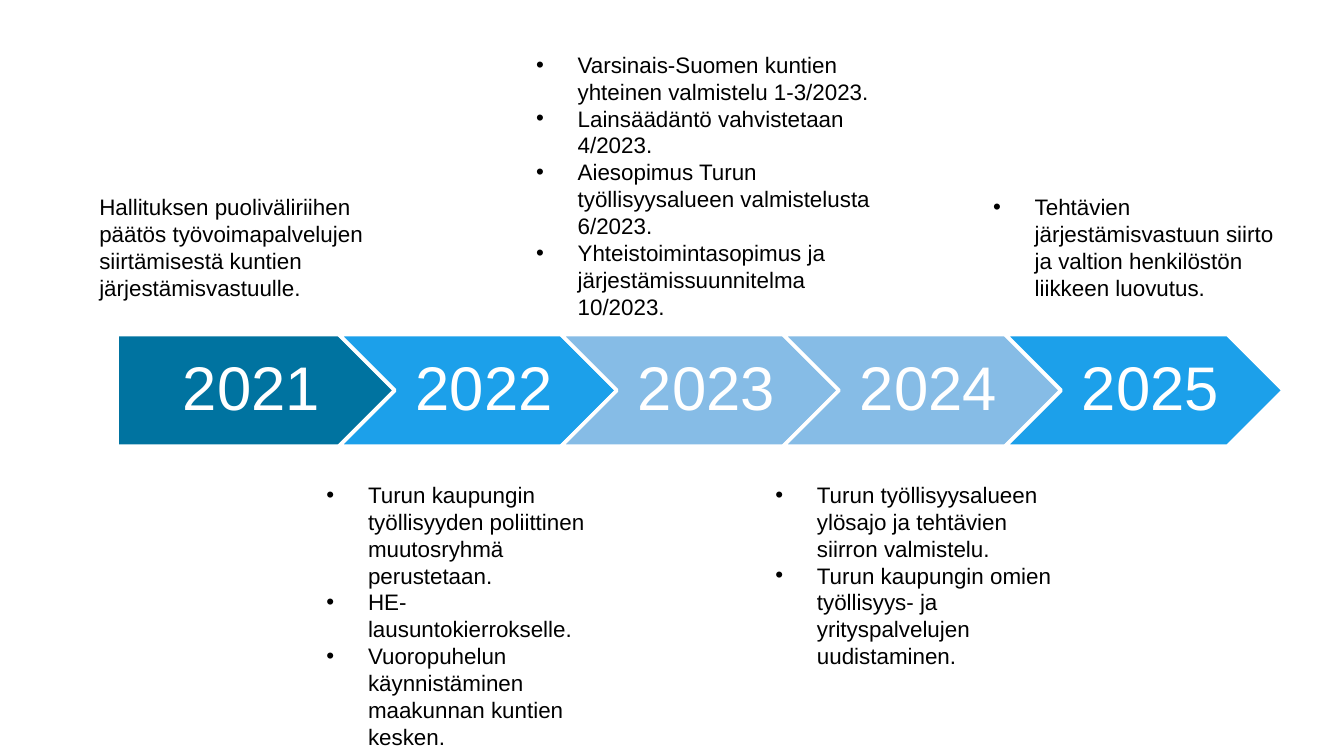
"""Build a timeline slide of yearly steps with notes above and below."""
from lxml import etree
from pptx import Presentation
from pptx.dml.color import RGBColor
from pptx.enum.shapes import MSO_SHAPE
from pptx.enum.text import MSO_ANCHOR, MSO_AUTO_SIZE, PP_ALIGN
from pptx.oxml.ns import qn
from pptx.util import Inches, Pt

PLATE, CHEVRON = MSO_SHAPE.PENTAGON, MSO_SHAPE.CHEVRON
MIDDLE, CENTER, GROW = MSO_ANCHOR.MIDDLE, PP_ALIGN.CENTER, MSO_AUTO_SIZE.SHAPE_TO_FIT_TEXT

COLORS = {"dark": "0073A0", "blue": "1CA0EA", "pale": "86BCE6", "white": "FFFFFF", "black": "000000"}
YEARS = [("2021", "dark"), ("2022", "blue"), ("2023", "pale"), ("2024", "pale"), ("2025", "blue")]
FIRST, LAST, TOP, WIDTH, HEIGHT = 0.87, 7.48, 2.49, 2.07, 0.83
STEP = (LAST - FIRST) / (len(YEARS) - 1)
INDENT = 0.31

NOTES = [
    ((2.33, 3.53, 2.31, 2.12), True, [
        "Turun kaupungin työllisyyden poliittinen muutosryhmä perustetaan.",
        "HE-lausuntokierrokselle.",
        "Vuoropuhelun käynnistäminen maakunnan kuntien kesken.",
    ]),
    ((3.89, 0.33, 2.77, 2.12), True, [
        "Varsinais-Suomen kuntien yhteinen valmistelu 1-3/2023.",
        "Lainsäädäntö vahvistetaan 4/2023.",
        "Aiesopimus Turun työllisyysalueen valmistelusta 6/2023.",
        "Yhteistoimintasopimus ja järjestämissuunnitelma 10/2023.",
    ]),
    ((0.64, 1.39, 2.31, 0.91), False, [
        "Hallituksen puoliväliriihen päätös työvoimapalvelujen siirtämisestä "
        "kuntien järjestämisvastuulle.",
    ]),
    ((5.67, 3.53, 2.31, 1.51), True, [
        "Turun työllisyysalueen ylösajo ja tehtävien siirron valmistelu.",
        "Turun kaupungin omien työllisyys- ja yrityspalvelujen uudistaminen.",
    ]),
    ((7.29, 1.39, 2.31, 0.91), True, [
        "Tehtävien järjestämisvastuun siirto ja valtion henkilöstön liikkeen luovutus.",
    ]),
]


def color(name):
    """Return the named colour."""
    return RGBColor.from_string(COLORS[name])


def assign(item, values):
    """Set each attribute from a dict of format values."""
    for name, value in values.items():
        setattr(item, name, value)


def style(para, size, ink):
    """Set the font of a paragraph."""
    assign(para.font, {"name": "Arial", "size": Pt(size)})
    para.font.color.rgb = color(ink)


def bullet(para):
    """Give a paragraph a hanging bullet."""
    props = para._p.get_or_add_pPr()
    props.set("marL", str(Inches(INDENT)))
    props.set("indent", str(-Inches(INDENT)))
    etree.SubElement(props, qn("a:buFont")).set("typeface", "Arial")
    etree.SubElement(props, qn("a:buChar")).set("char", "•")


def add_year(slide, index, year, fill):
    """Add one arrow of the timeline with its year."""
    kind, inset = (CHEVRON, 0.14) if index else (PLATE, 0.19)
    box = [Inches(n) for n in (FIRST + index * STEP, TOP, WIDTH, HEIGHT)]
    shape = slide.shapes.add_shape(kind, *box)
    shape.shadow.inherit = False
    shape.fill.solid()
    shape.fill.fore_color.rgb = color(fill)
    shape.line.color.rgb = color("white")
    shape.line.width = Pt(2)
    frame = shape.text_frame
    assign(frame, {
        "margin_left": Inches(inset), "margin_right": Inches(0.05),
        "margin_top": Inches(0.1), "margin_bottom": Inches(0.1),
        "vertical_anchor": MIDDLE, "word_wrap": True,
    })
    para = frame.paragraphs[0]
    assign(para, {"text": year, "alignment": CENTER, "line_spacing": 0.9})
    style(para, 33, "white")


def add_note(slide, box, listed, lines):
    """Add a text box with plain or bulleted paragraphs."""
    frame = slide.shapes.add_textbox(*[Inches(n) for n in box]).text_frame
    assign(frame, {"word_wrap": True, "auto_size": GROW})
    for index, line in enumerate(lines):
        para = frame.add_paragraph() if index else frame.paragraphs[0]
        para.text = line
        if listed:
            bullet(para)
        style(para, 12, "black")


def main():
    """Build and save the slide."""
    deck = Presentation()
    assign(deck, {"slide_width": Inches(10), "slide_height": Inches(10 * 9 / 16)})
    slide = deck.slides.add_slide(deck.slide_layouts[6])
    for index, (year, fill) in enumerate(YEARS):
        add_year(slide, index, year, fill)
    for box, listed, lines in NOTES:
        add_note(slide, box, listed, lines)
    deck.save("out.pptx")


if __name__ == "__main__":
    main()
